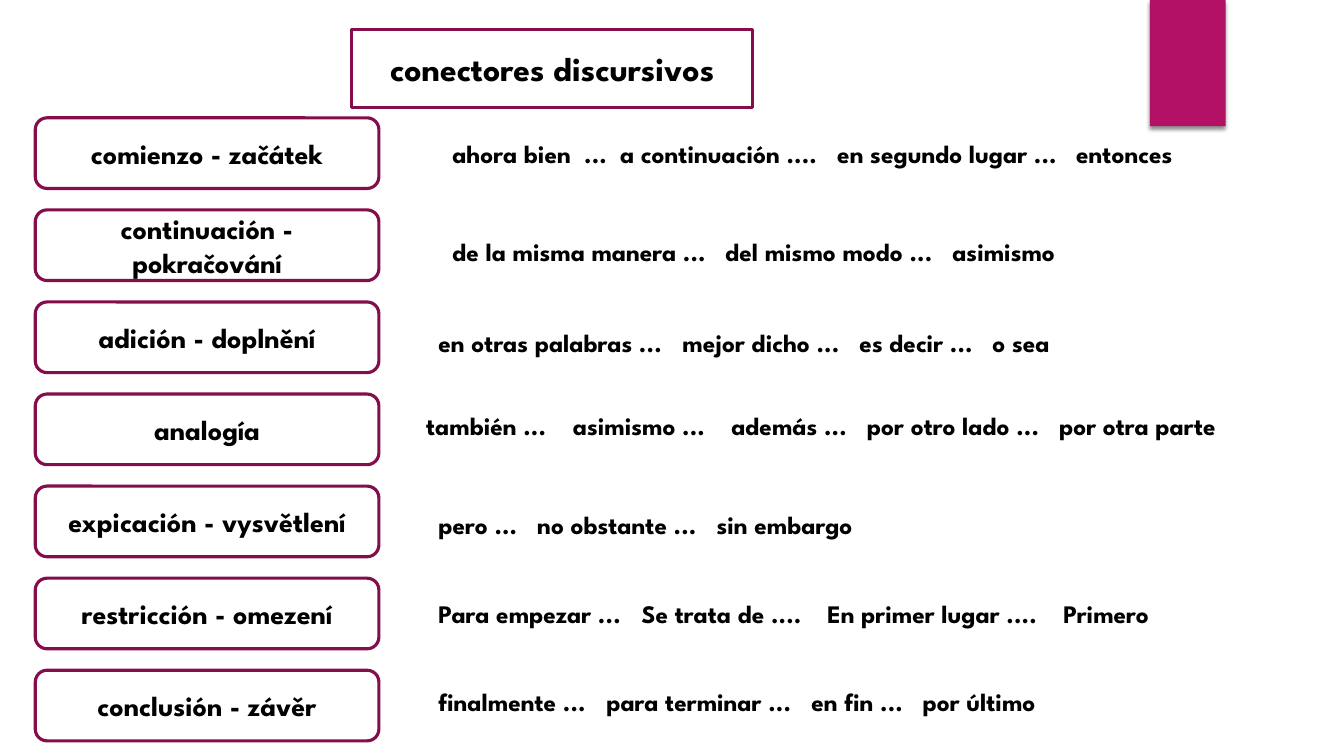
from dataclasses import dataclass

from pptx import Presentation
from pptx.dml.color import RGBColor
from pptx.enum.shapes import MSO_SHAPE as Shape
from pptx.enum.text import MSO_ANCHOR as Anchor, MSO_AUTO_SIZE as Fit, PP_ALIGN as Align
from pptx.oxml import parse_xml
from pptx.oxml.ns import nsdecls
from pptx.util import Cm, Pt


@dataclass(frozen=True)
class Theme:
    font: str = "League Spartan"
    accent: RGBColor = RGBColor(0xB3, 0x11, 0x66)
    border: RGBColor = RGBColor(0x84, 0x0D, 0x4B)
    paper: RGBColor = RGBColor(0xFF, 0xFF, 0xFF)
    ink: RGBColor = RGBColor(0, 0, 0)
    title_size: int = 24
    label_size: int = 20
    phrase_size: int = 18
    border_width: float = 2.25


# Each row: label, left, top and width of the phrases, then (phrase, tab position)
ROWS = [
    ("comienzo - začátek", 11.15, 3.35, 20.85,
     [("ahora bien  ...", 0), ("a continuación ....", 4.23),
      ("en segundo lugar ...", 9.7), ("entonces", 15.72)]),
    ("continuación - pokračování", 11.15, 5.82, 17.6,
     [("de la misma manera ...", 0), ("del mismo modo ...", 6.88), ("asimismo", 12.6)]),
    ("adición - doplnění", 10.8, 8.13, 17.58,
     [("en otras palabras ...", 0), ("mejor dicho ...", 6.15),
      ("es decir ...", 10.61), ("o sea", 13.96)]),
    ("analogía", 10.49, 10.21, 22.2,
     [("también ...", 0), ("asimismo ...", 3.7), ("además ...", 7.69),
      ("por otro lado ...", 11.11), ("por otra parte", 15.95)]),
    ("expicación - vysvětlení", 10.8, 12.7, 12.22,
     [("pero ...", 0), ("no obstante ...", 2.49), ("sin embargo", 7.01)]),
    ("restricción - omezení", 10.8, 14.96, 19.69,
     [("Para empezar ...", 0), ("Se trata de ....", 5.12),
      ("En primer lugar ....", 9.8), ("Primero", 15.75)]),
    ("conclusión - závěr", 10.8, 17.17, 16.56,
     [("finalmente ...", 0), ("para terminar ...", 4.23),
      ("en fin ...", 9.4), ("por último", 12.2)]),
]
LABEL_LEFT, LABEL_TOP, LABEL_PITCH = 0.89, 2.97, 2.32
LABEL_WIDTH, LABEL_HEIGHT = 8.66, 1.78


class ConnectorSlide:
    def __init__(self, slide, theme):
        self.slide, self.theme = slide, theme

    def apply(self, target, formats):
        for attribute, value in formats.items():
            setattr(target, attribute, value)

    def add_text(self, paragraph, text, size):
        run = paragraph.add_run()
        run.text = text
        self.apply(run.font, {"name": self.theme.font, "size": Pt(size), "bold": True})
        run.font.color.rgb = self.theme.ink

    def frame(self, box, text, size):
        """Give a box its border and centred text."""
        box.shadow.inherit = False
        box.fill.solid()
        box.fill.fore_color.rgb = self.theme.paper
        box.line.color.rgb = self.theme.border
        box.line.width = Pt(self.theme.border_width)
        self.apply(box.text_frame, {"word_wrap": True, "auto_size": Fit.NONE,
                                    "vertical_anchor": Anchor.MIDDLE})
        paragraph = box.text_frame.paragraphs[0]
        paragraph.alignment = Align.CENTER
        self.add_text(paragraph, text, size)

    def title(self, text, left, top, width, height):
        title = self.slide.shapes.title
        self.apply(title, {"left": Cm(left), "top": Cm(top),
                           "width": Cm(width), "height": Cm(height)})
        title._element.spPr.append(parse_xml(
            f'<a:prstGeom {nsdecls("a")} prst="roundRect"><a:avLst/></a:prstGeom>'))
        self.frame(title, text, self.theme.title_size)

    def label(self, text, left, top, width, height):
        label = self.slide.shapes.add_shape(
            Shape.ROUNDED_RECTANGLE, Cm(left), Cm(top), Cm(width), Cm(height))
        self.frame(label, text, self.theme.label_size)

    def phrases(self, phrases, left, top, width, height=1.02):
        box = self.slide.shapes.add_textbox(Cm(left), Cm(top), Cm(width), Cm(height))
        box.text_frame.word_wrap = True
        paragraph = box.text_frame.paragraphs[0]
        stops = "".join(f'<a:tab pos="{Cm(stop)}" algn="l"/>' for _, stop in phrases[1:])
        paragraph._p.get_or_add_pPr().append(
            parse_xml(f'<a:tabLst {nsdecls("a")}>{stops}</a:tabLst>'))
        self.add_text(paragraph, "\t".join(phrase for phrase, _ in phrases),
                      self.theme.phrase_size)

    def ribbon(self, left, top, width, height):
        ribbon = self.slide.shapes.add_shape(
            Shape.RECTANGLE, Cm(left), Cm(top), Cm(width), Cm(height))
        ribbon.fill.solid()
        ribbon.fill.fore_color.rgb = self.theme.accent
        ribbon.line.fill.background()
        ribbon._element.spPr.append(parse_xml(
            f'<a:effectLst {nsdecls("a")}><a:outerShdw blurRad="{Pt(3)}" dist="{Pt(2)}" '
            'dir="5400000" rotWithShape="0"><a:srgbClr val="000000">'
            '<a:alpha val="45000"/></a:srgbClr></a:outerShdw></a:effectLst>'))


def main():
    deck = Presentation()
    deck.slide_width, deck.slide_height = Cm(33.87), Cm(19.05)
    page = ConnectorSlide(deck.slides.add_slide(deck.slide_layouts[5]), Theme())

    # Heading and corner ribbon
    page.ribbon(28.98, 0, 1.91, 3.18)
    page.title("conectores discursivos", 8.86, 0.74, 10.11, 1.96)

    # Functions on the left, their connectors on the right
    for index, (label, left, top, width, phrases) in enumerate(ROWS):
        page.label(label, LABEL_LEFT, LABEL_TOP + index * LABEL_PITCH,
                   LABEL_WIDTH, LABEL_HEIGHT)
        page.phrases(phrases, left, top, width)

    deck.save("out.pptx")


if __name__ == "__main__":
    main()
